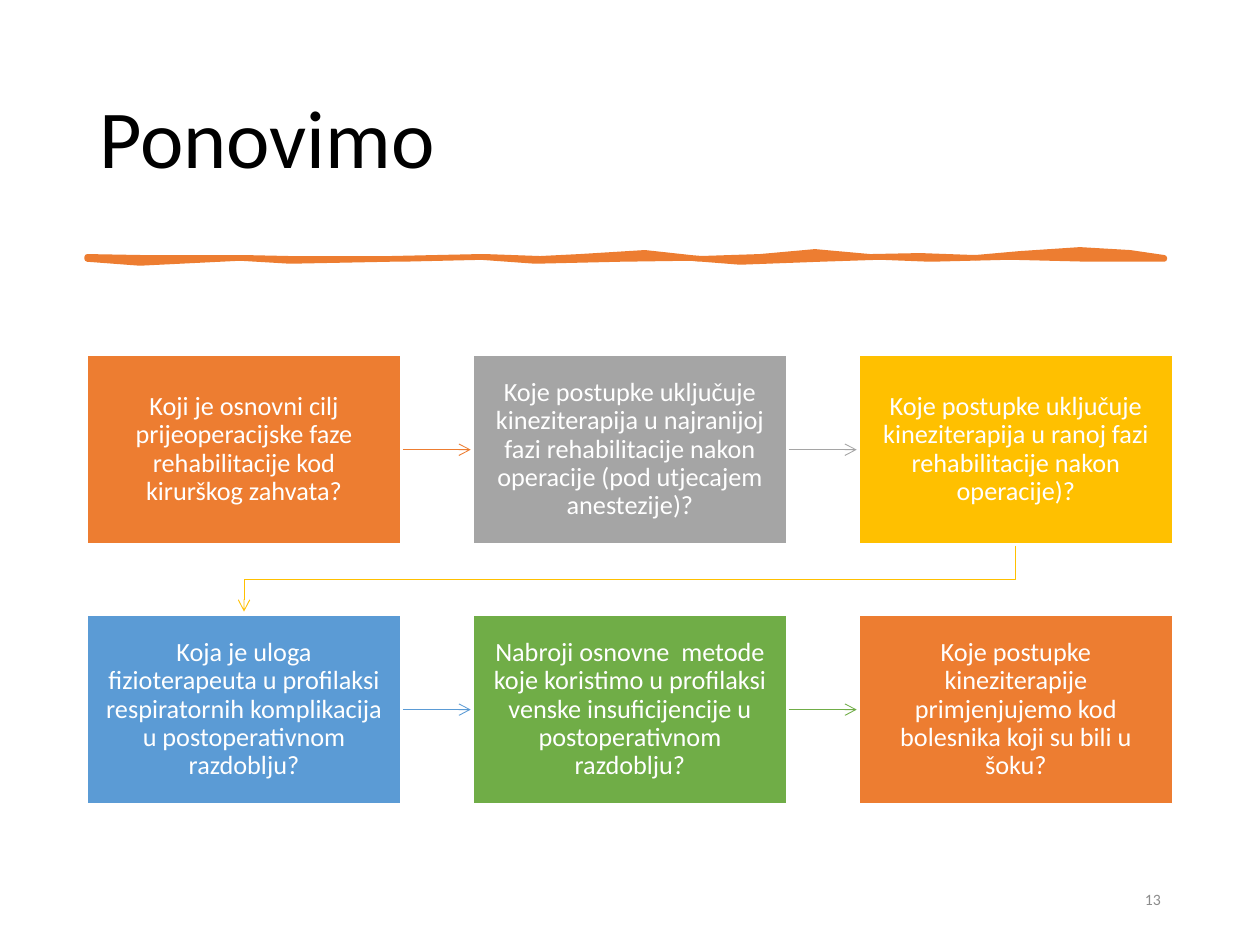
import pptx
import pptx.util
import pptx.dml.color
import pptx.enum.shapes
import pptx.enum.text
from lxml import etree

Cm, Pt = pptx.util.Cm, pptx.util.Pt
RGB = pptx.dml.color.RGBColor.from_string
ALIGN, ANCHOR = pptx.enum.text.PP_ALIGN, pptx.enum.text.MSO_ANCHOR
A = "{http://schemas.openxmlformats.org/drawingml/2006/main}"

colors = {
    "orange": "ED7D31", "gray": "A5A5A5", "gold": "FFC000", "blue": "5B9BD5",
    "green": "70AD47", "white": "FFFFFF", "black": "000000", "number": "8C8C8C",
}
questions = [
    ("orange", "Koji je osnovni cilj prijeoperacijske faze rehabilitacije kod kirurškog zahvata?"),
    ("gray", "Koje postupke uključuje kineziterapija u najranijoj fazi rehabilitacije nakon operacije (pod utjecajem anestezije)?"),
    ("gold", "Koje postupke uključuje kineziterapija u ranoj fazi rehabilitacije nakon operacije)?"),
    ("blue", "Koja je uloga fizioterapeuta u profilaksi respiratornih komplikacija u postoperativnom razdoblju?"),
    ("green", "Nabroji osnovne  metode koje koristimo u profilaksi venske insuficijencije u postoperativnom razdoblju?"),
    ("orange", "Koje postupke kineziterapije primjenjujemo kod bolesnika koji su bili u šoku?"),
]
brush_top = [
    (1.76, 5.18), (2.88, 5.2), (4.92, 5.2), (5.85, 5.22), (8.06, 5.22), (9.78, 5.18),
    (10.89, 5.22), (11.69, 5.18), (13, 5.1), (14.11, 5.22), (15.32, 5.18), (16.43, 5.08),
    (17.54, 5.18), (18.55, 5.16), (19.66, 5.2), (20.56, 5.12), (21.77, 5.04),
    (22.78, 5.1), (23.47, 5.2),
]
brush_bottom = [
    (23.47, 5.22), (21.97, 5.22), (20.36, 5.18), (18.75, 5.22), (17.74, 5.18),
    (16.53, 5.22), (14.92, 5.28), (13.91, 5.2), (12.5, 5.22), (10.79, 5.26), (9.68, 5.18),
    (7.86, 5.22), (5.85, 5.26), (4.84, 5.2), (2.82, 5.3), (1.76, 5.22),
]

deck = pptx.Presentation()
deck.slide_width, deck.slide_height = Cm(25.4), Cm(19.05)
slide = deck.slides.add_slide(deck.slide_layouts[5])


def format_text(frame, text, size, color, align):
    frame.word_wrap = True
    frame.vertical_anchor = ANCHOR.MIDDLE
    frame.text = text
    paragraph = frame.paragraphs[0]
    paragraph.alignment = align
    paragraph.line_spacing = 0.9
    paragraph.font.name = "Calibri"
    paragraph.font.size = Pt(size)
    paragraph.font.color.rgb = RGB(colors[color])


def draw_path(points, color, width, closed):
    corners = [(Cm(x), Cm(y)) for x, y in points]
    builder = slide.shapes.build_freeform(*corners[0])
    builder.add_line_segments(corners[1:], close=closed)
    outline = builder.convert_to_shape()
    outline.shadow.inherit = False
    outline.line.color.rgb = RGB(colors[color])
    outline.line.width = Pt(width)
    return outline


title = slide.shapes.title
title.left, title.top, title.width, title.height = Cm(1.75), Cm(1.02), Cm(21.9), Cm(3.68)
format_text(title.text_frame, "Ponovimo", 47, "black", ALIGN.LEFT)

brush_stroke = draw_path(brush_top + brush_bottom, "orange", 3.25, True)
brush_stroke.fill.solid()
brush_stroke.fill.fore_color.rgb = RGB(colors["orange"])

page_number = slide.shapes.add_textbox(Cm(17.93), Cm(17.65), Cm(5.72), Cm(1.02))
format_text(page_number.text_frame, "13", 9, "number", ALIGN.RIGHT)

columns = 3
grid_left, grid_top = 1.76, 7.17
box_width, box_height = 6.32, 3.79
column_step, row_step = 7.78, 5.24
arrow_gap = 0.04
arrow_length = 1.37

for index, (color, question) in enumerate(questions):
    row, column = divmod(index, columns)
    left = grid_left + column * column_step
    top = grid_top + row * row_step
    right, bottom = left + box_width, top + box_height
    middle = top + box_height / 2

    if index < len(questions) - 1:
        if column < columns - 1:
            start = right + arrow_gap
            arrow = slide.shapes.add_connector(
                pptx.enum.shapes.MSO_CONNECTOR.STRAIGHT,
                Cm(start), Cm(middle), Cm(start + arrow_length), Cm(middle))
            etree.SubElement(arrow.line._get_or_add_ln().getparent(), A + "effectLst")
            arrow.line.color.rgb = RGB(colors[color])
            arrow.line.width = Pt(0.5)
        else:
            from_x, to_x = left + box_width / 2, grid_left + box_width / 2
            turn_y = (bottom + grid_top + row_step) / 2
            arrow = draw_path(
                [(from_x, bottom + arrow_gap), (from_x, turn_y), (to_x, turn_y),
                 (to_x, bottom + arrow_length)], color, 0.5, False)
            arrow.fill.background()
        etree.SubElement(arrow.line._get_or_add_ln(), A + "tailEnd", type="arrow")

    box = slide.shapes.add_shape(
        pptx.enum.shapes.MSO_SHAPE.RECTANGLE, Cm(left), Cm(top), Cm(box_width), Cm(box_height))
    box.shadow.inherit = False
    box.fill.solid()
    box.fill.fore_color.rgb = RGB(colors[color])
    box.line.color.rgb = RGB(colors["white"])
    box.line.width = Pt(1)
    frame = box.text_frame
    frame.margin_left = frame.margin_right = Cm(0.3)
    frame.margin_top = frame.margin_bottom = Cm(0.33)
    format_text(frame, question, 15, "white", ALIGN.CENTER)

deck.save("out.pptx")
